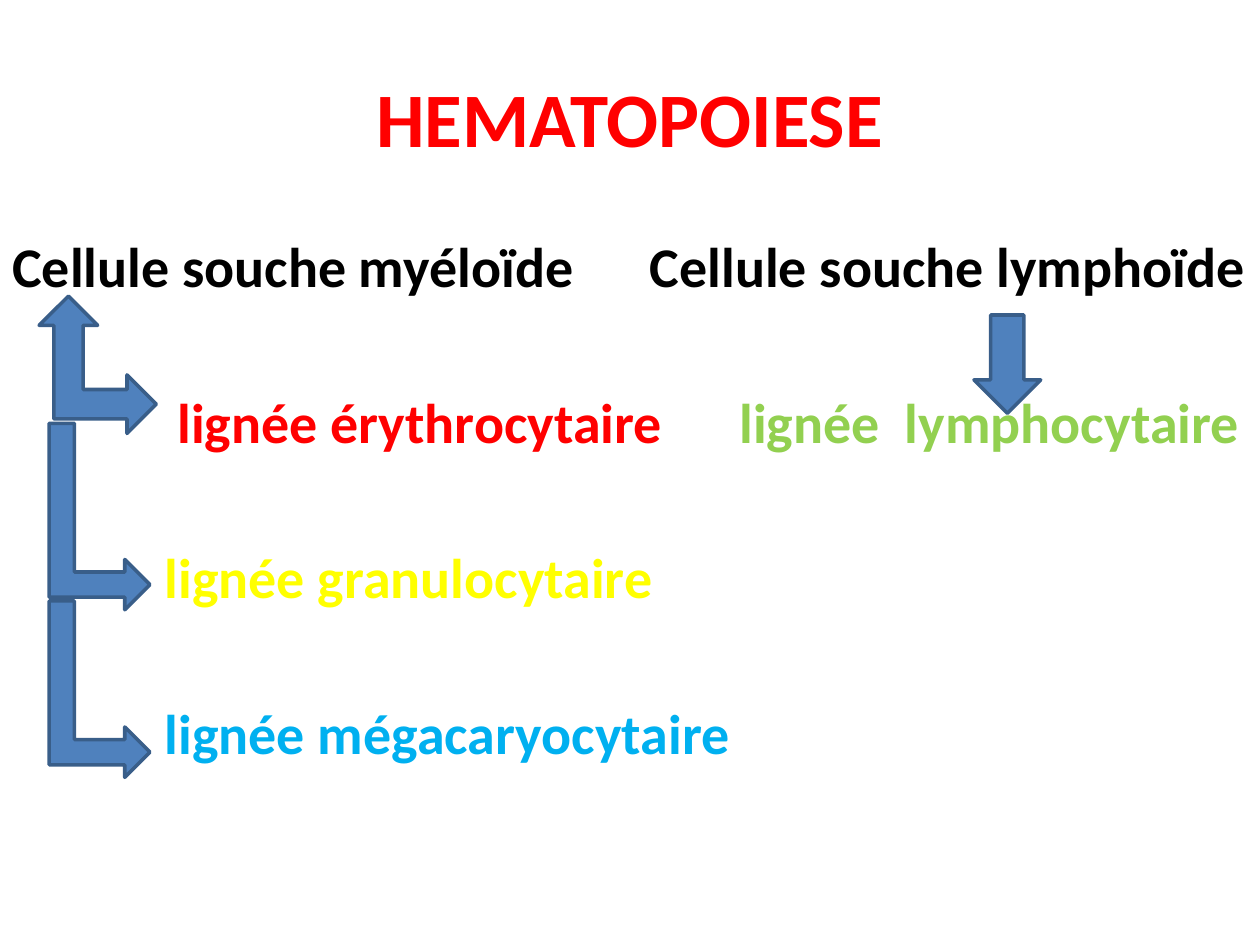
import pptx
import pptx.util
import pptx.dml.color
import pptx.enum.shapes
import pptx.enum.text

Inches = pptx.util.Inches
Pt = pptx.util.Pt
Shape = pptx.enum.shapes.MSO_SHAPE
Align = pptx.enum.text.PP_ALIGN
Anchor = pptx.enum.text.MSO_ANCHOR

TITLE = [("HEMATOPOIESE", "FF0000", 0)]
# text, colour, indent
MYELOID = [
    ("Cellule souche myéloïde", "000000", 0),
    ("lignée érythrocytaire", "FF0000", 1.31),
    ("lignée granulocytaire", "FFFF00", 1.21),
    ("lignée mégacaryocytaire", "00B0F0", 1.21),
]
LYMPHOID = [
    ("Cellule souche lymphoïde", "000000", 0),
    ("lignée  lymphocytaire", "92D050", 0.71),
]
# shape, left, top, width, height, rotation
ARROWS = [
    (Shape.LEFT_UP_ARROW, 0.23, 2.43, 1.09, 0.93, 90),
    (Shape.BENT_UP_ARROW, 0.05, 3.7, 1.48, 0.8, 90),
    (Shape.BENT_UP_ARROW, 0.09, 5.07, 1.4, 0.8, 90),
    (Shape.DOWN_ARROW, 7.73, 2.5, 0.53, 0.78, 0),
]
ROW_GAP = 50.5


def rgb(code):
    return pptx.dml.color.RGBColor.from_string(code)


def add_text(slide, rows, place, size, align=Align.LEFT, anchor=Anchor.TOP):
    box = slide.shapes.add_textbox(*map(Inches, place))
    frame = box.text_frame
    frame.word_wrap = True
    frame.vertical_anchor = anchor
    frame.text = "\n".join(text for text, _, _ in rows)
    for i, (para, (_, color, indent)) in enumerate(zip(frame.paragraphs, rows)):
        para.alignment = align
        para.space_before = Pt(ROW_GAP if i else 0)
        para._p.get_or_add_pPr().set("marL", str(Inches(indent)))
        font = para.runs[0].font
        font.name, font.size, font.bold = "Calibri", Pt(size), True
        font.color.rgb = rgb(color)


def add_arrow(slide, kind, left, top, width, height, turn):
    arrow = slide.shapes.add_shape(kind, *map(Inches, (left, top, width, height)))
    arrow.rotation = turn
    arrow.shadow.inherit = False
    arrow.fill.solid()
    arrow.fill.fore_color.rgb = rgb("4F81BD")
    arrow.line.color.rgb = rgb("395E89")
    arrow.line.width = Pt(2)


def main():
    deck = pptx.Presentation()
    deck.slide_width, deck.slide_height = Inches(10), Inches(7.5)
    slide = deck.slides.add_slide(deck.slide_layouts[6])
    add_text(slide, TITLE, (0.5, 0.3, 9, 1.25), 44, Align.CENTER, Anchor.MIDDLE)
    add_text(slide, MYELOID, (0, 1.79, 6, 4.4), 32)
    add_text(slide, LYMPHOID, (5.06, 1.79, 4.94, 1.9), 32)
    for arrow in ARROWS:
        add_arrow(slide, *arrow)
    deck.save("out.pptx")


if __name__ == "__main__":
    main()
